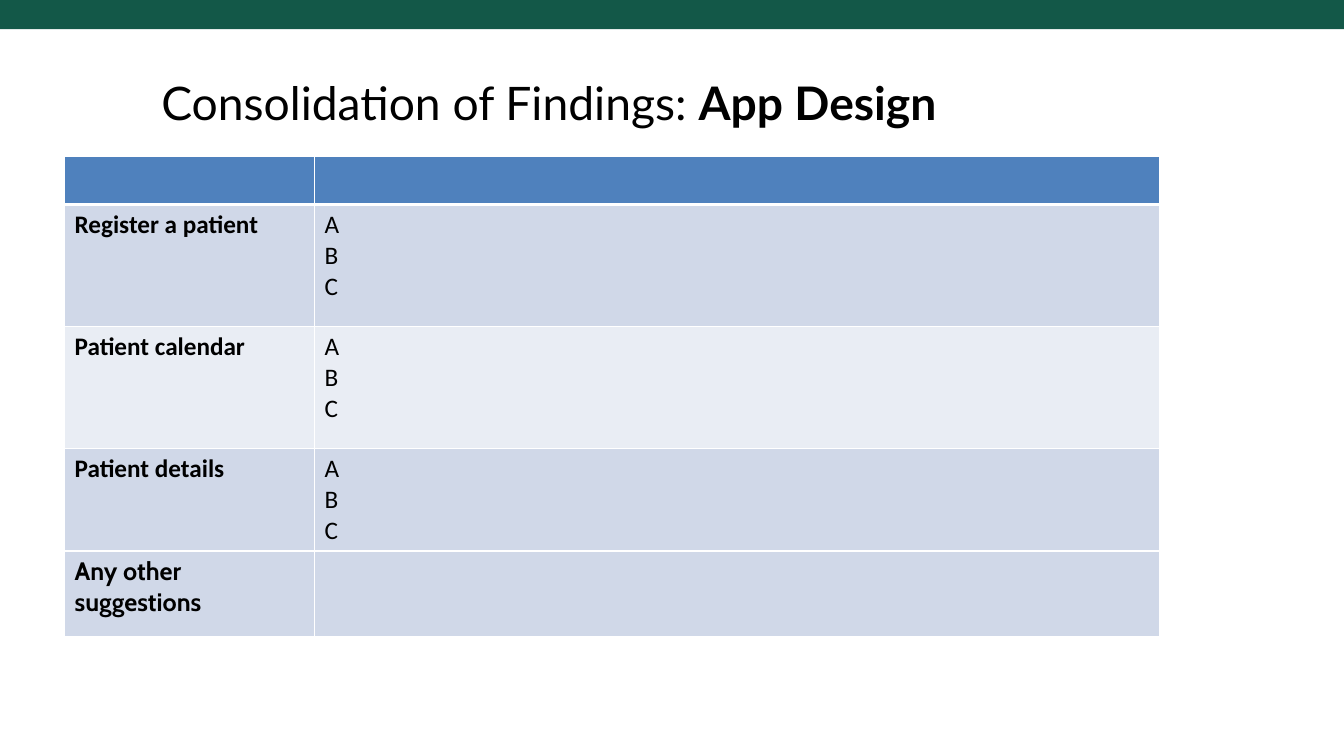
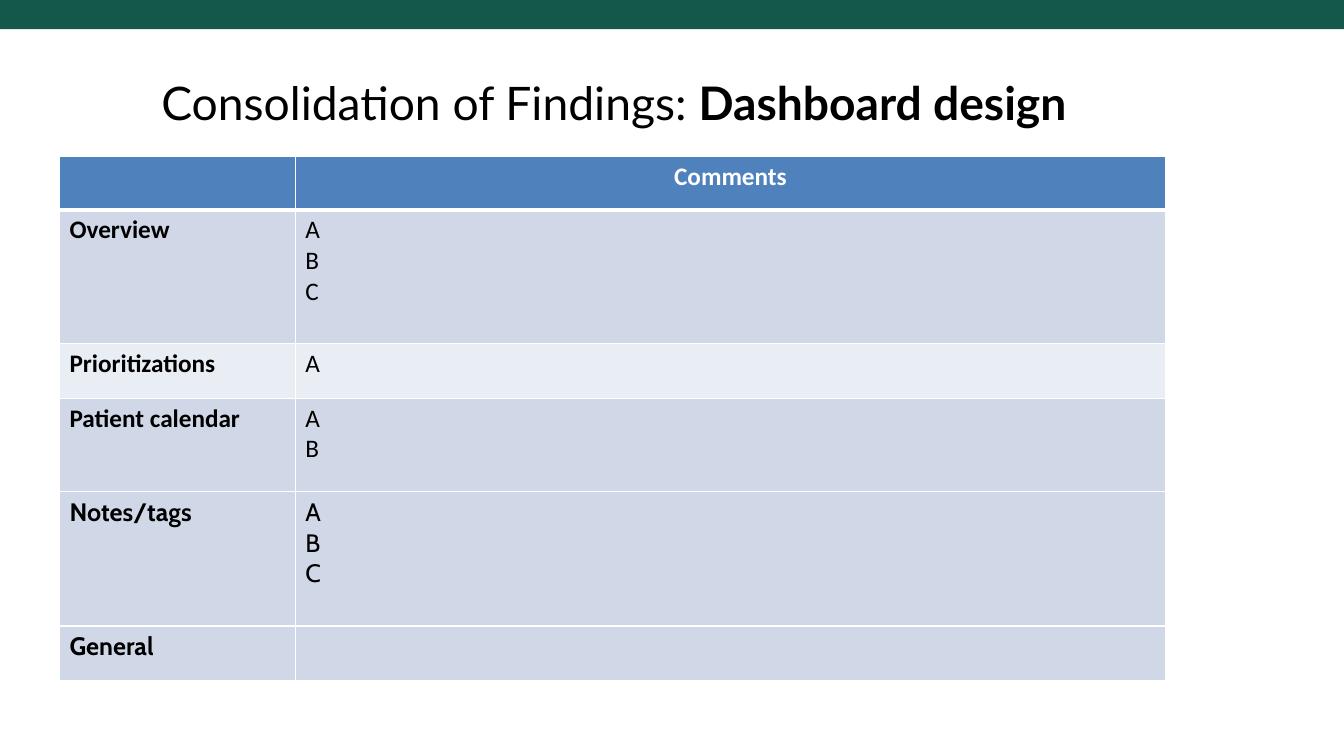
from lxml import etree
from pptx import Presentation
from pptx.dml.color import RGBColor
from pptx.enum.shapes import MSO_SHAPE
from pptx.enum.text import MSO_ANCHOR, MSO_AUTO_SIZE, PP_ALIGN
from pptx.oxml.ns import qn
from pptx.util import Inches, Pt

RECT = MSO_SHAPE.RECTANGLE
TOP = MSO_ANCHOR.TOP
FIXED = MSO_AUTO_SIZE.NONE
LEFT, CENTER = PP_ALIGN.LEFT, PP_ALIGN.CENTER

GREEN = RGBColor(0x13, 0x58, 0x48)
BLUE = RGBColor(0x4F, 0x81, 0xBD)
DARK = RGBColor(0xD0, 0xD8, 0xE8)
LIGHT = RGBColor(0xE9, 0xED, 0xF4)
BLACK = RGBColor(0, 0, 0)
WHITE = RGBColor(0xFF, 0xFF, 0xFF)


def set_edge(cell, side, width):
    props = cell._tc.get_or_add_tcPr()
    line = etree.SubElement(props, qn("a:ln" + side), w=str(Pt(width)))
    fill = etree.SubElement(line, qn("a:solidFill"))
    etree.SubElement(fill, qn("a:srgbClr"), val=str(WHITE))


def fill_cell(cell, text, face, bold, ink, align, back, top, base):
    for side, width in (("L", 1), ("R", 1), ("T", top), ("B", base)):
        set_edge(cell, side, width)
    cell.fill.solid()
    cell.fill.fore_color.rgb = back
    cell.text = text
    for para in cell.text_frame.paragraphs:
        para.alignment = align
        para.font.name = face
        para.font.size = Pt(18)
        para.font.bold = bold
        para.font.color.rgb = ink


PAGES = [
    ("App Design", 0.64, (2.48, 8.38), [
        ("", "", 0.48, BLUE, "Calibri"),
        ("Register a patient", "A\nB\nC", 1.21, DARK, "Calibri"),
        ("Patient calendar", "A\nB\nC", 1.21, LIGHT, "Calibri"),
        ("Patient details", "A\nB\nC", 1.01, DARK, "Calibri"),
        ("Any other suggestions", "", 0.85, DARK, "Cabin"),
    ]),
    ("Dashboard design", 0.59, (2.34, 8.63), [
        ("", "Comments", 0.53, BLUE, "Calibri"),
        ("Overview", "A\nB\nC", 1.33, DARK, "Calibri"),
        ("Prioritizations", "A", 0.54, LIGHT, "Calibri"),
        ("Patient calendar", "A\nB", 0.93, DARK, "Calibri"),
        ("Notes/tags", "A\nB\nC", 1.33, DARK, "Cabin"),
        ("General", "", 0.54, DARK, "Cabin"),
    ]),
]

prs = Presentation()
prs.slide_width = Inches(13.33)
prs.slide_height = Inches(7.5)
layout = prs.slide_layouts[5]

for index, (topic, left, widths, rows) in enumerate(PAGES):
    slide = prs.slides.add_slide(layout)
    if index == 0:
        band = slide.shapes.add_shape(RECT, 0, 0, prs.slide_width, Inches(0.29))
        band.shadow.inherit = False
        band.fill.solid()
        band.fill.fore_color.rgb = GREEN
        band.line.fill.background()
        layout.shapes.element.insert(2, band.element)

    title = slide.shapes.title
    title.left, title.top = Inches(1.5), Inches(0.75)
    title.width, title.height = Inches(10.5), Inches(0.66)
    frame = title.text_frame
    frame.auto_size = FIXED
    frame.vertical_anchor = TOP
    para = frame.paragraphs[0]
    para.alignment = LEFT
    para.line_spacing = 0.89
    para.font.name = "Lato"
    para.font.size = Pt(33)
    para.font.color.rgb = BLACK
    para.add_run().text = "Consolidation of Findings: "
    run = para.add_run()
    run.text = topic
    run.font.bold = True

    width = Inches(sum(widths))
    height = Inches(sum(row[2] for row in rows))
    table = slide.shapes.add_table(
        len(rows), 2, Inches(left), Inches(1.55), width, height).table
    for column, size in zip(table.columns, widths):
        column.width = Inches(size)
    for r, (label, notes, tall, back, face) in enumerate(rows):
        table.rows[r].height = Inches(tall)
        head = r == 0
        ink = WHITE if head else BLACK
        align = CENTER if head else LEFT
        top = 3 if r == 1 else 1
        base = 3 if head else 1
        for c, text in enumerate((label, notes)):
            bold = head or c == 0
            fill_cell(table.cell(r, c), text, face, bold, ink, align, back, top, base)

prs.save("out.pptx")
